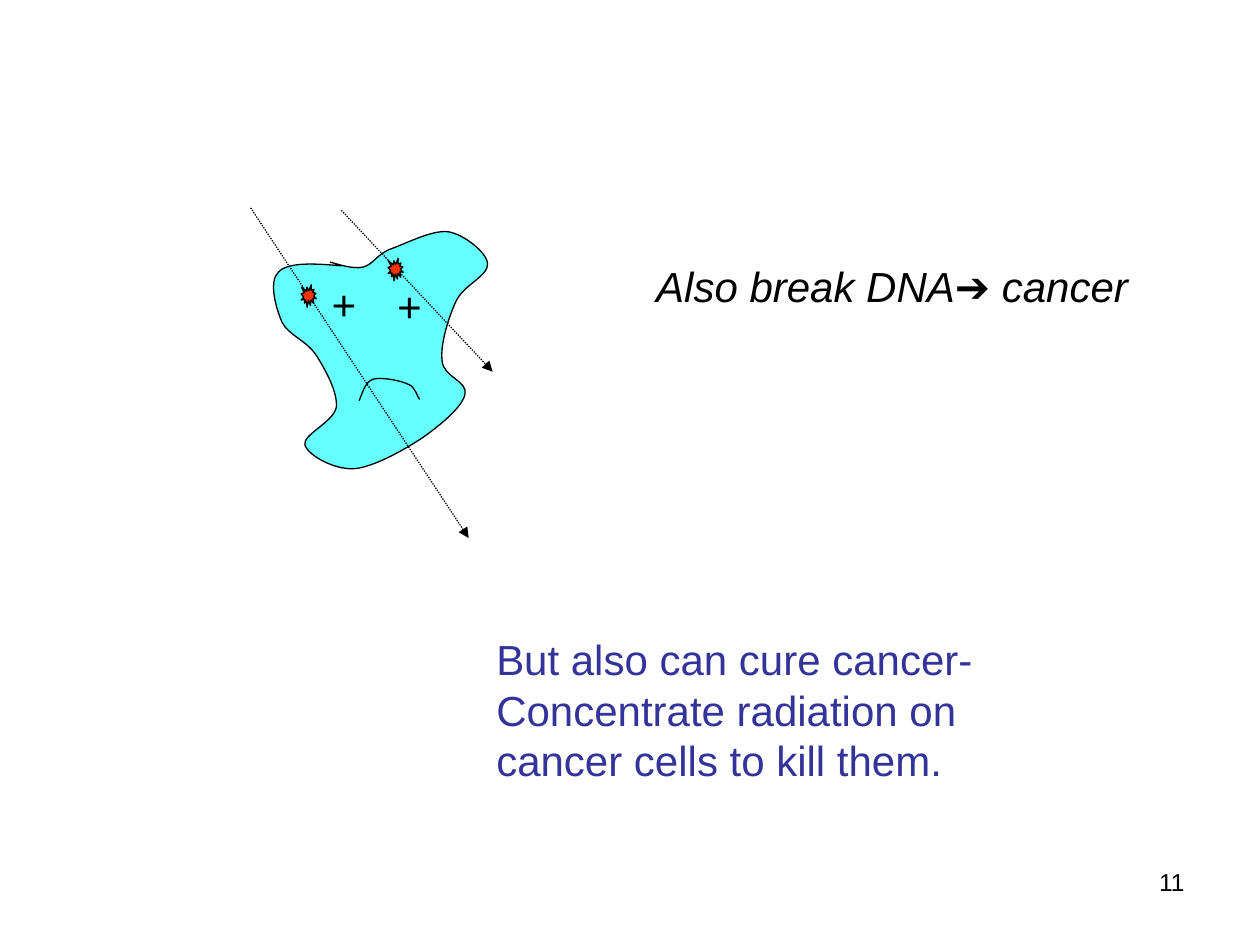
from dataclasses import dataclass

from lxml.etree import SubElement
from pptx import Presentation
from pptx.dml.color import RGBColor
from pptx.enum.dml import MSO_LINE_DASH_STYLE as Dash
from pptx.enum.shapes import MSO_CONNECTOR as Connector, MSO_SHAPE as Shape
from pptx.enum.text import MSO_AUTO_SIZE as AutoSize, PP_ALIGN as Align
from pptx.oxml.ns import qn
from pptx.util import Inches, Pt

# The slide is a grid of 1000 columns by 750 rows; all positions are cells.
COLUMNS, ROWS = 1000, 750
CELL = Inches(10) // COLUMNS


@dataclass(frozen=True)
class Theme:
    font: str = "Arial"
    ink: RGBColor = RGBColor(0x00, 0x00, 0x00)
    cell: RGBColor = RGBColor(0x66, 0xFF, 0xFF)
    damage: RGBColor = RGBColor(0xFF, 0x33, 0x00)
    cure: RGBColor = RGBColor(0x33, 0x33, 0x99)
    body_size: Pt = Pt(24)
    number_size: Pt = Pt(14)
    line_width: Pt = Pt(0.75)


THEME = Theme()

# Each outline is a start point, then Bézier curves of three points each.
CELL_OUTLINE = [
    (271, 211),
    (249, 209), (228, 208), (221, 216),
    (213, 223), (219, 245), (224, 256),
    (229, 266), (243, 270), (251, 282),
    (258, 293), (268, 311), (267, 323),
    (265, 335), (240, 345), (242, 353),
    (244, 361), (265, 373), (281, 372),
    (296, 371), (321, 357), (336, 347),
    (350, 337), (367, 323), (369, 313),
    (372, 303), (352, 299), (351, 287),
    (349, 274), (356, 252), (362, 239),
    (368, 226), (388, 219), (387, 209),
    (386, 200), (368, 186), (356, 184),
    (343, 182), (321, 194), (309, 198),
    (298, 203), (296, 210), (288, 212),
    (280, 214), (266, 209), (262, 208),
]
FROWN_OUTLINE = [
    (285, 318),
    (288, 311), (290, 303), (296, 301),
    (303, 299), (318, 302), (324, 305),
    (330, 307), (331, 315), (333, 317),
]


def grid(*cells):
    return [cell * CELL for cell in cells]


def style_shape(shape, fill=None):
    shape.shadow.inherit = False
    if fill is None:
        shape.fill.background()
    else:
        shape.fill.solid()
        shape.fill.fore_color.rgb = fill
    shape.line.color.rgb = THEME.ink
    shape.line.width = THEME.line_width


def add_curve(slide, points, fill=None):
    """Draw a freeform, joining every three line segments into one curve."""
    builder = slide.shapes.build_freeform(*points[0], scale=CELL)
    builder.add_line_segments(points[1:], close=False)
    shape = builder.convert_to_shape()
    outline = next(shape._element.iter(qn("a:path")))
    segments = outline.findall(qn("a:lnTo"))
    for first in range(0, len(segments), 3):
        curve = SubElement(outline, qn("a:cubicBezTo"))
        for segment in segments[first:first + 3]:
            curve.append(segment[0])
            outline.remove(segment)
    style_shape(shape, fill)


def add_ray(slide, start, end):
    ray = slide.shapes.add_connector(Connector.STRAIGHT, *grid(*start, *end))
    ray.line.color.rgb = THEME.ink
    ray.line.width = THEME.line_width
    ray.line.dash_style = Dash.ROUND_DOT
    SubElement(ray.line._get_or_add_ln(), qn("a:tailEnd"), type="triangle")
    SubElement(ray._element.spPr, qn("a:effectLst"))


def add_burst(slide, left, top):
    burst = slide.shapes.add_shape(Shape.EXPLOSION1, *grid(left, top, 12, 18))
    style_shape(burst, THEME.damage)


def add_text(slide, text, box, size=THEME.body_size, color=THEME.ink,
             italic=False, wrap=True, align=Align.LEFT, grow=True):
    frame = slide.shapes.add_textbox(*grid(*box)).text_frame
    frame.word_wrap = wrap
    frame.auto_size = AutoSize.SHAPE_TO_FIT_TEXT if grow else AutoSize.NONE
    paragraph = frame.paragraphs[0]
    paragraph.text = text
    paragraph.alignment = align
    paragraph.font.name = THEME.font
    paragraph.font.size = size
    paragraph.font.italic = italic
    paragraph.font.color.rgb = color


def main():
    presentation = Presentation()
    presentation.slide_width, presentation.slide_height = grid(COLUMNS, ROWS)
    slide = presentation.slides.add_slide(presentation.slide_layouts[6])

    add_text(slide, "11", (717, 683, 233, 52), size=THEME.number_size,
             align=Align.RIGHT, grow=False)

    add_curve(slide, CELL_OUTLINE, THEME.cell)
    add_ray(slide, (199, 165), (372, 427))
    add_ray(slide, (271, 167), (391, 295))
    for left, top in ((253, 216), (305, 218)):
        add_text(slide, "+", (left, top, 43, 50), italic=True, wrap=False)
    add_curve(slide, FROWN_OUTLINE)
    for left, top in ((239, 226), (308, 205)):
        add_burst(slide, left, top)

    add_text(slide, "Also break DNA➔ cancer", (511, 202, 417, 50),
             italic=True, wrap=False)
    add_text(slide, "But also can cure cancer- Concentrate radiation on "
             "cancer cells to kill them.", (384, 498, 442, 130),
             color=THEME.cure)

    presentation.save("out.pptx")


if __name__ == "__main__":
    main()
